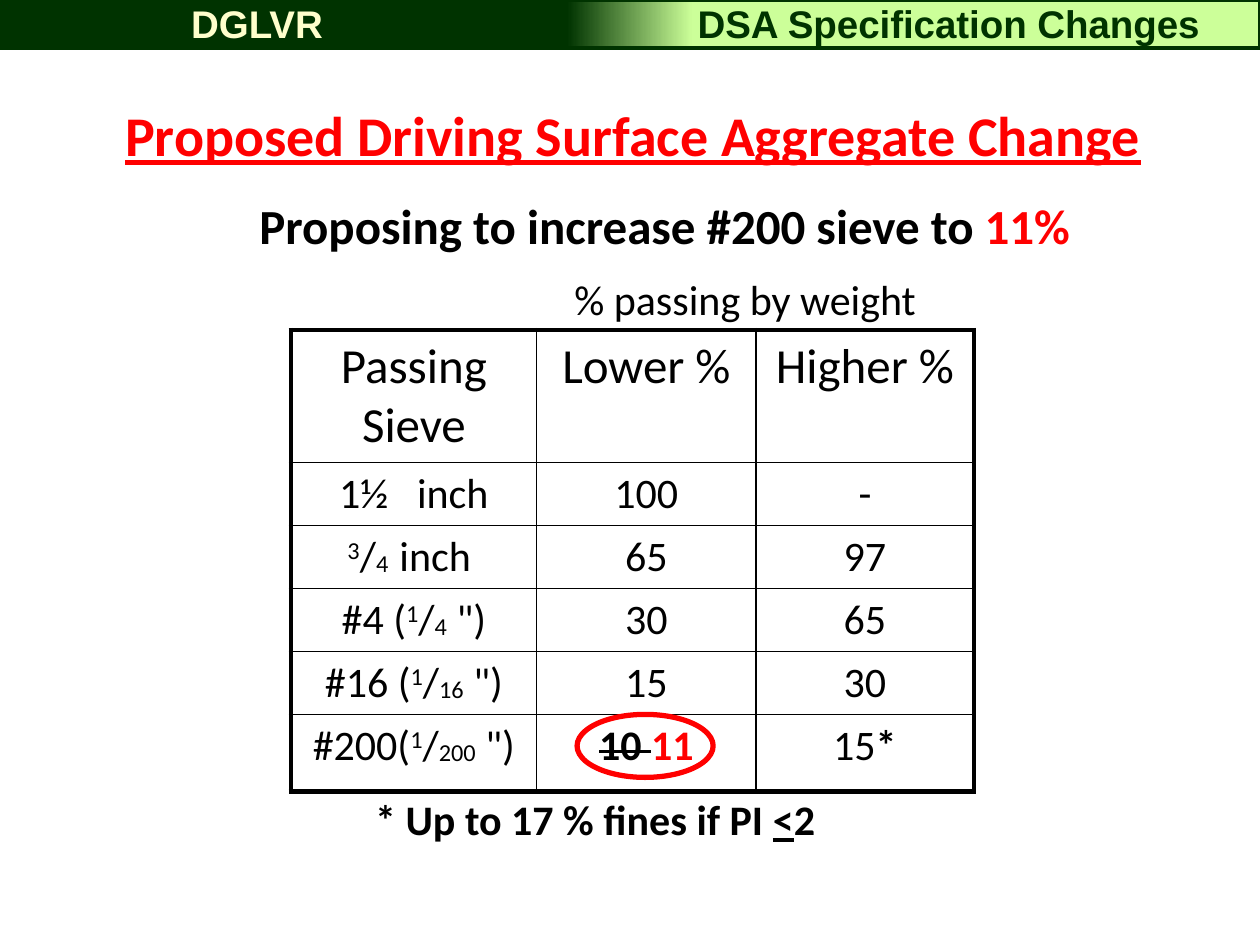
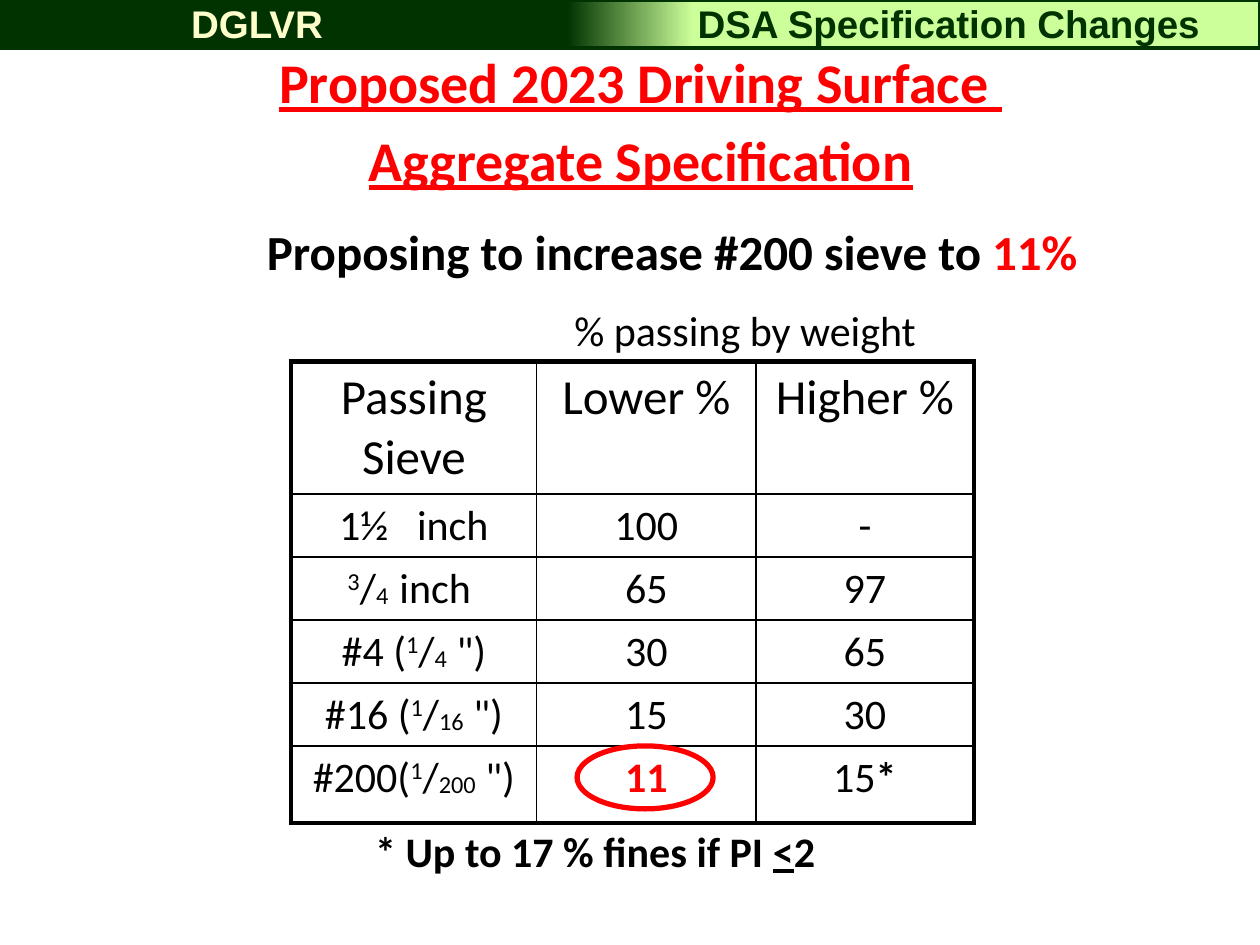
from lxml import etree
from pptx import Presentation
from pptx.dml.color import RGBColor
from pptx.enum.shapes import MSO_SHAPE
from pptx.enum.text import MSO_ANCHOR, MSO_AUTO_SIZE, PP_ALIGN
from pptx.oxml.ns import qn
from pptx.util import Inches, Pt

DARK = RGBColor(0x00, 0x33, 0x00)
LIME = RGBColor(0xCC, 0xFF, 0x99)
CREAM = RGBColor(0xFF, 0xFF, 0xCC)
RED = RGBColor(0xFF, 0x00, 0x00)
BLACK = RGBColor(0x00, 0x00, 0x00)

LEFT, CENTER = PP_ALIGN.LEFT, PP_ALIGN.CENTER
TOP = MSO_ANCHOR.TOP
NO_FIT = MSO_AUTO_SIZE.NONE
RECT, OVAL = MSO_SHAPE.RECTANGLE, MSO_SHAPE.OVAL

COLS = [1.95, 1.74, 1.73]
ROWS = [1.05, 0.5, 0.5, 0.5, 0.5, 0.61]
THIN, THICK = 1, 3


def write(para, text, size=24, font="Calibri", color=BLACK, bold=False,
          line=False, strike=False, base=0):
    """Add a run; base is its shift from the baseline in percent."""
    run = para.add_run()
    run.text = text
    run.font.size, run.font.name = Pt(size), font
    run.font.color.rgb = color
    run.font.bold, run.font.underline = bold, line
    props = run._r.get_or_add_rPr()
    if strike:
        props.set("strike", "sngStrike")
    if base:
        props.set("baseline", str(base * 1000))


def fill_para(para, parts, align=LEFT, **look):
    """Write parts, each a text or a (text, format) pair, over a shared look."""
    para.alignment = align
    for part in parts:
        text, extra = (part, {}) if isinstance(part, str) else part
        write(para, text, **{**look, **extra})


def add_text(slide, box, parts, **look):
    frame = slide.shapes.add_textbox(*map(Inches, box)).text_frame
    frame.word_wrap = True
    fill_para(frame.paragraphs[0], parts, **look)


def ratio(pre, upper, lower, post):
    return [pre, (upper, {"base": 30}), "/", (lower, {"base": -2}), post]


def add_band(slide):
    band = slide.shapes.add_shape(RECT, 0, 0, Inches(10), Inches(0.38))
    band.shadow.inherit = False
    band.fill.gradient()
    band.fill.gradient_angle = 0
    stops = zip(band.fill.gradient_stops, (DARK, LIME), (0.45, 0.55))
    for stop, color, place in stops:
        stop.color.rgb, stop.position = color, place
    band.line.color.rgb, band.line.width = DARK, Pt(2)
    look = dict(size=22, font="Arial", bold=True, align=CENTER)
    add_text(slide, (0, -0.05, 4.08, 0.47), ["DGLVR"], color=CREAM, **look)
    add_text(slide, (5.02, -0.05, 5.02, 0.47), ["DSA Specification Changes"],
             color=DARK, **look)


def set_title(slide, lines, box):
    title = slide.shapes.title
    title.left, title.top, title.width, title.height = map(Inches, box)
    frame = title.text_frame
    frame.vertical_anchor, frame.auto_size = TOP, NO_FIT
    for i, text in enumerate(lines):
        para = frame.add_paragraph() if i else frame.paragraphs[0]
        para.space_before = Pt(6 if i else 0)
        fill_para(para, [text], align=CENTER, size=32, color=RED, bold=True,
                  line=True)


def set_edge(cell, side, width):
    edge = etree.SubElement(cell._tc.get_or_add_tcPr(), qn("a:ln" + side),
                            w=str(Pt(width)))
    paint = etree.SubElement(edge, qn("a:solidFill"))
    etree.SubElement(paint, qn("a:srgbClr"), val=str(BLACK))


def add_grid(slide, left, top, cells):
    """Place the sieve table with a thick frame and thin inner rules."""
    shape = slide.shapes.add_table(
        len(ROWS), len(COLS), Inches(left), Inches(top),
        Inches(sum(COLS)), Inches(sum(ROWS)))
    grid = shape.table
    grid.first_row = grid.horz_banding = False
    for col, width in zip(grid.columns, COLS):
        col.width = Inches(width)
    for row, height in zip(grid.rows, ROWS):
        row.height = Inches(height)
    for r, line in enumerate(cells):
        for c, parts in enumerate(line):
            cell = grid.cell(r, c)
            fill_para(cell.text_frame.paragraphs[0], parts, align=CENTER,
                      size=24 if r else 28)
            outer = {"L": c == 0, "R": c == len(COLS) - 1,
                     "T": r == 0, "B": r == len(ROWS) - 1}
            for side, thick in outer.items():
                set_edge(cell, side, THICK if thick else THIN)
            cell.fill.background()


def add_sieve(slide, left, top, lower):
    """Place the table, its caption, its footnote and the ring on one value."""
    cells = [
        [["Passing Sieve"], ["Lower %"], ["Higher %"]],
        [["1½   inch"], ["100"], ["-"]],
        [ratio("", "3", "4  ", "inch "), ["65"], ["97"]],
        [ratio("#4 (", "1", "4", ' ")'), ["30"], ["65"]],
        [ratio("#16 (", "1", "16", ' ")'), ["15"], ["30"]],
        [ratio("#200(", "1", "200", ' ")'), lower,
         ["15", ("*", {"bold": True})]],
    ]
    add_grid(slide, left, top, cells)
    add_text(slide, (left + 2.15, top - 0.5, 3.1, 0.5),
             ["% passing by weight"])
    add_text(slide, (left + 0.57, top + 3.63, 3.9, 0.5),
             ["* Up to 17 % fines if PI ", ("<", {"line": True}), "2"],
             bold=True)
    ring = slide.shapes.add_shape(OVAL, Inches(left + 2.27),
                                  Inches(top + 3.05), Inches(1.08),
                                  Inches(0.5))
    ring.shadow.inherit = False
    ring.fill.background()
    ring.line.color.rgb, ring.line.width = RED, Pt(3)


def add_page(deck, lines, left, top, goal, sieve, lower):
    """Build a slide: title at left and top, goal line and table at their tops."""
    slide = deck.slides.add_slide(deck.slide_layouts[5])
    add_band(slide)
    set_title(slide, lines, (left, top, 10.17, 0.12 + 0.63 * len(lines)))
    add_text(slide, (left + 0.5, goal, 9.67, 0.57),
             ["Proposing to increase #200 sieve to ", ("11%", {"color": RED})],
             size=28, bold=True, align=CENTER)
    add_sieve(slide, 2.31, sieve, lower)


def main():
    deck = Presentation()
    deck.slide_width, deck.slide_height = Inches(10), Inches(7.5)
    new = ("11", {"color": RED, "bold": True})
    old = ("10 ", {"bold": True, "strike": True})
    add_page(deck, ["Proposed Driving Surface Aggregate Change"],
             -0.06, 0.75, 1.5, 2.62, [old, new])
    add_page(deck, ["Proposed 2023 Driving Surface ",
                    "Aggregate Specification"],
             0, 0.33, 1.71, 2.87, [new])
    deck.save("out.pptx")


if __name__ == "__main__":
    main()
